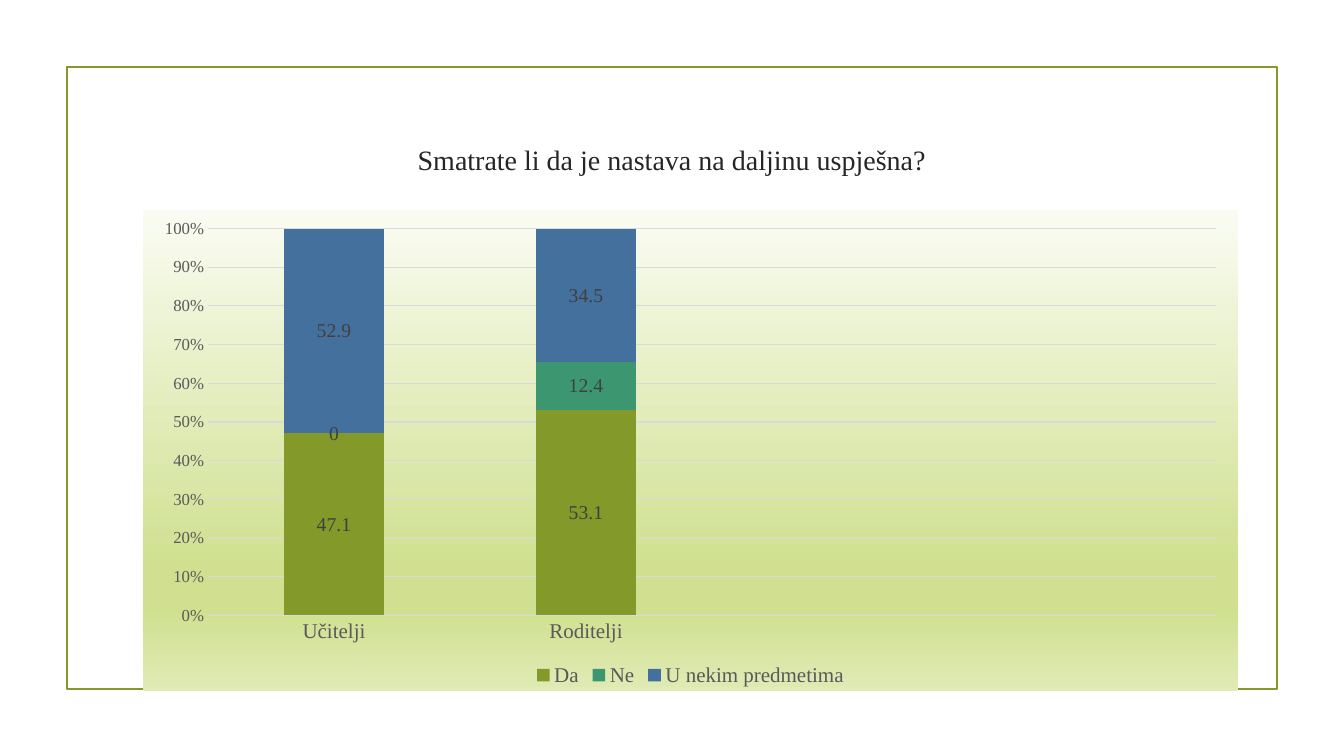
"""Build a slide with a 100% stacked column chart on distance teaching."""
from lxml import etree
from pptx import Presentation
from pptx import util as u
from pptx.chart import data
from pptx.dml.color import RGBColor
from pptx.enum import chart as ch, shapes, text

OLIVE = RGBColor(0x83, 0x99, 0x2A)
GREEN = RGBColor(0x3C, 0x97, 0x70)
BLUE = RGBColor(0x44, 0x70, 0x9D)
INK = RGBColor(0x26, 0x26, 0x26)
LABEL = RGBColor(0x40, 0x40, 0x40)
GREY = RGBColor(0x59, 0x59, 0x59)
GRID = RGBColor(0xD9, 0xD9, 0xD9)
BACKDROP = [
    (0, RGBColor(0xFA, 0xFC, 0xF3)),
    (74, RGBColor(0xD0, 0xE0, 0x90)),
    (83, RGBColor(0xD0, 0xE0, 0x90)),
    (100, RGBColor(0xE0, 0xEB, 0xB5)),
]
SERIES = [
    ("Da", (47.1, 53.1, None, None), OLIVE),
    ("Ne", (0, 12.4, None, None), GREEN),
    ("U nekim predmetima", (52.9, 34.5, None, None), BLUE),
]
A = "http://schemas.openxmlformats.org/drawingml/2006/main"
C = "http://schemas.openxmlformats.org/drawingml/2006/chart"


def px(*lengths):
    return [u.Emu(round(n * 914400 / 100.8)) for n in lengths]


def set_font(font, size, color):
    for name, value in {"name": "Times New Roman", "size": u.Pt(size), "bold": False}.items():
        setattr(font, name, value)
    font.color.rgb = color


prs = Presentation()
prs.slide_width, prs.slide_height = px(1344, 756)
s = prs.slides.add_slide(prs.slide_layouts[6])

frame = s.shapes.add_shape(shapes.MSO_SHAPE.RECTANGLE, *px(67, 67, 1210, 622))
frame.shadow.inherit = False
frame.fill.background()
frame.line.color.rgb = OLIVE
frame.line.width = u.Pt(1.25)

title = s.shapes.add_textbox(*px(143, 108, 1058, 102))
tf = title.text_frame
for name, value in {"word_wrap": True, "vertical_anchor": text.MSO_ANCHOR.MIDDLE}.items():
    setattr(tf, name, value)
p = tf.paragraphs[0]
p.alignment = text.PP_ALIGN.CENTER
r = p.add_run()
r.text = "Smatrate li da je nastava na daljinu uspješna?"
set_font(r.font, 20, INK)

answers = data.CategoryChartData()
answers.categories = ["Učitelji", "Roditelji", "", ""]
for name, values, color in SERIES:
    answers.add_series(name, values)
chart = s.shapes.add_chart(
    ch.XL_CHART_TYPE.COLUMN_STACKED_100, *px(143, 210, 1095, 481), answers
).chart
set_font(chart.font, 10, RGBColor(0, 0, 0))
chart.has_title = False
chart.has_legend = True
legend = chart.legend
for name, value in {"position": ch.XL_LEGEND_POSITION.BOTTOM, "include_in_layout": False}.items():
    setattr(legend, name, value)
set_font(legend.font, 15, GREY)

plot = chart.plots[0]
for name, value in {"gap_width": 150, "overlap": 100, "vary_by_categories": False}.items():
    setattr(plot, name, value)
for series, (name, values, color) in zip(plot.series, SERIES):
    series.format.fill.solid()
    series.format.fill.fore_color.rgb = color
    labels = series.data_labels
    for key, value in {"show_value": True, "position": ch.XL_LABEL_POSITION.CENTER}.items():
        setattr(labels, key, value)
    set_font(labels.font, 14, LABEL)

cat_axis, val_axis = chart.category_axis, chart.value_axis
for axis, size in ((cat_axis, 15), (val_axis, 12)):
    axis.major_tick_mark = axis.minor_tick_mark = ch.XL_TICK_MARK.NONE
    set_font(axis.tick_labels.font, size, GREY)
val_axis.has_major_gridlines = True
for line in (cat_axis.format.line, val_axis.major_gridlines.format.line):
    line.color.rgb = GRID
    line.width = u.Pt(0.75)
val_axis.format.line.fill.background()
for name, value in {"minimum_scale": 0, "maximum_scale": 1, "major_unit": 0.1}.items():
    setattr(val_axis, name, value)
for name, value in {"number_format": "0%", "number_format_is_linked": False}.items():
    setattr(val_axis.tick_labels, name, value)

stops = "".join(
    f'<a:gs pos="{pos * 1000}"><a:srgbClr val="{color}"/></a:gs>' for pos, color in BACKDROP
)
backdrop = etree.fromstring(
    f'<c:spPr xmlns:c="{C}" xmlns:a="{A}"><a:gradFill><a:gsLst>{stops}</a:gsLst>'
    '<a:lin ang="5400000" scaled="0"/></a:gradFill><a:ln><a:noFill/></a:ln></c:spPr>'
)
chart.element.find(f"{{{C}}}chart").addnext(backdrop)

prs.save("out.pptx")
